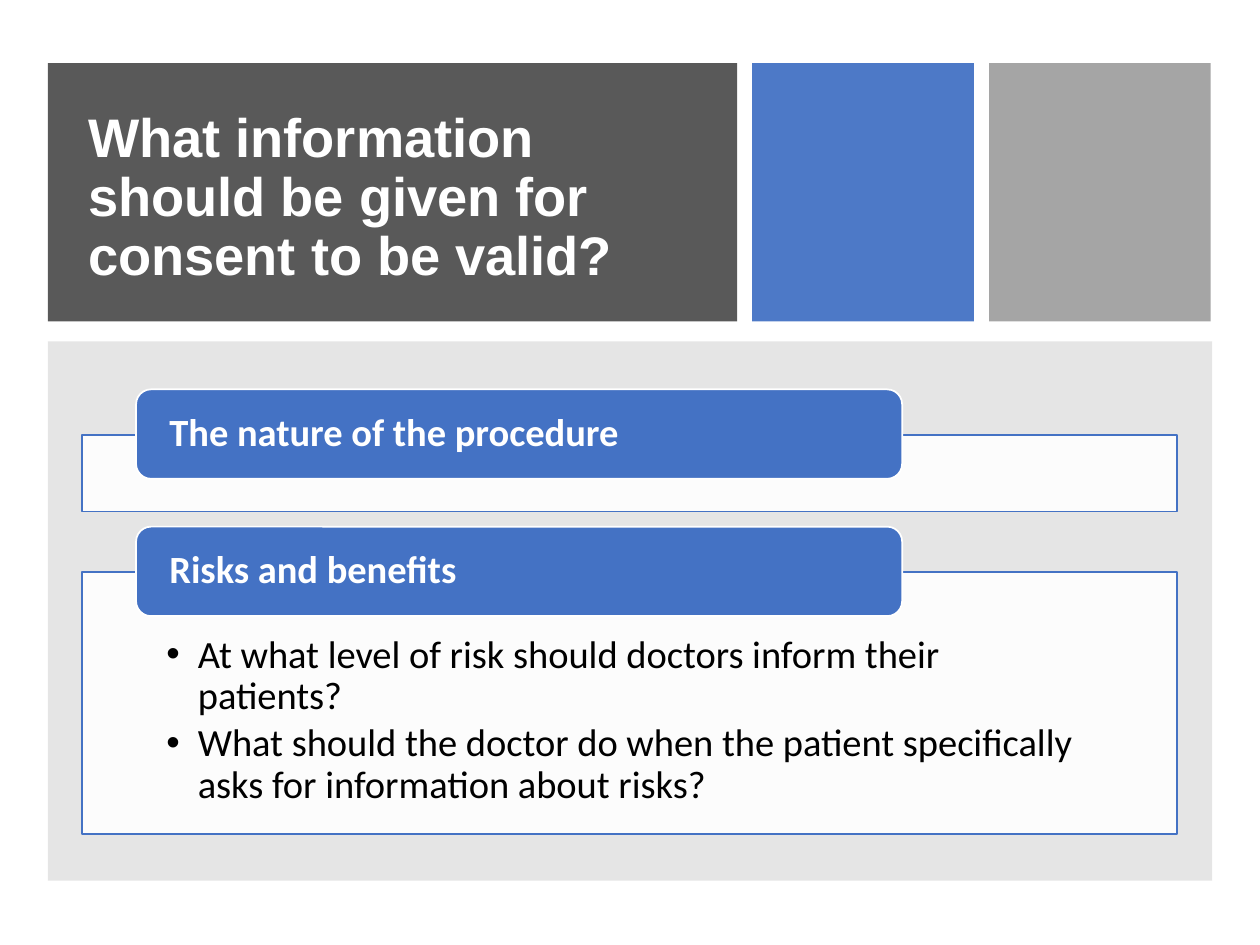
"""Build the slide on what information makes consent valid."""
import pptx
import pptx.dml.color
import pptx.enum.shapes
import pptx.enum.text
import pptx.oxml.ns
import pptx.util
from lxml import etree

Inches, Pt = pptx.util.Inches, pptx.util.Pt
RGB = pptx.dml.color.RGBColor.from_string
SHAPE = pptx.enum.shapes.MSO_SHAPE
ANCHOR = pptx.enum.text.MSO_ANCHOR
ALIGN = pptx.enum.text.PP_ALIGN
qn = pptx.oxml.ns.qn
COLORS = {"dark": "595959", "blue": "4472C4", "silver": "A5A5A5",
          "gray": "808080", "white": "FFFFFF", "black": "000000"}


def add_box(kind, left, top, width, height, fill, alpha=100, line=None):
    sp = s.shapes.add_shape(kind, Inches(left), Inches(top), Inches(width), Inches(height))
    sp.shadow.inherit = False
    sp.fill.solid()
    sp.fill.fore_color.rgb = RGB(COLORS[fill])
    if alpha < 100:
        clr = sp.element.spPr.find(qn("a:solidFill"))[0]
        etree.SubElement(clr, qn("a:alpha"), val=str(alpha * 1000))
    if line:
        sp.line.color.rgb = RGB(COLORS[line])
        sp.line.width = Pt(1)
    else:
        sp.line.fill.background()
    return sp


def add_text(p, text, font, size, color, bold=False):
    p.alignment = ALIGN.LEFT
    p.line_spacing = 0.9
    r = p.add_run()
    r.text = text
    r.font.name = font
    r.font.size = Pt(size)
    r.font.bold = bold
    r.font.color.rgb = RGB(COLORS[color])


prs = pptx.Presentation()
prs.slide_width, prs.slide_height = Inches(10), Inches(7.5)
s = prs.slides.add_slide(prs.slide_layouts[5])

add_box(SHAPE.RECTANGLE, 0.38, 0.5, 5.47, 2.05, "dark")
add_box(SHAPE.RECTANGLE, 5.97, 0.5, 1.76, 2.05, "blue", 95)
add_box(SHAPE.RECTANGLE, 7.85, 0.5, 1.76, 2.05, "silver")
add_box(SHAPE.RECTANGLE, 0.38, 2.71, 9.24, 4.28, "gray", 20)

title = s.shapes.title
title.left, title.top = Inches(0.6), Inches(0.8)
title.width, title.height = Inches(5), Inches(1.56)
tf = title.text_frame
tf.word_wrap = True
tf.auto_size = pptx.enum.text.MSO_AUTO_SIZE.NONE
tf.vertical_anchor = ANCHOR.MIDDLE
add_text(tf.paragraphs[0], "What information should be given for consent to be valid?",
         "Arial", 31, "white", True)
title.element.getparent().append(title.element)

sections = [
    (3.45, 0.61, "The nature of the procedure", []),
    (4.54, 2.08, "Risks and benefits", [
        "At what level of risk should doctors inform their patients?",
        "What should the doctor do when the patient specifically asks for information about risks?",
    ]),
]
for top, height, heading, bullets in sections:
    panel = add_box(SHAPE.RECTANGLE, 0.65, top, 8.69, height, "white", 90, "blue")
    tf = panel.text_frame
    tf.word_wrap = True
    tf.vertical_anchor = ANCHOR.TOP
    tf.margin_left = tf.margin_right = Inches(0.67)
    tf.margin_top, tf.margin_bottom = Inches(0.5), Inches(0.17)
    for i, bullet in enumerate(bullets):
        p = tf.add_paragraph() if i else tf.paragraphs[0]
        pPr = p._p.get_or_add_pPr()
        pPr.set("marL", str(Inches(0.25)))
        pPr.set("indent", str(Inches(-0.25)))
        etree.SubElement(pPr, qn("a:buFont"), typeface="Arial")
        etree.SubElement(pPr, qn("a:buChar"), char="•")
        p.space_after = Pt(3)
        add_text(p, bullet, "Calibri", 22, "black")

    pill = add_box(SHAPE.ROUNDED_RECTANGLE, 1.08, top - 0.36, 6.08, 0.71, "blue", line="white")
    tf = pill.text_frame
    tf.word_wrap = True
    tf.vertical_anchor = ANCHOR.MIDDLE
    tf.margin_left = tf.margin_right = Inches(0.23)
    tf.margin_top = tf.margin_bottom = 0
    add_text(tf.paragraphs[0], heading, "Calibri", 22, "white", True)

prs.save("out.pptx")
